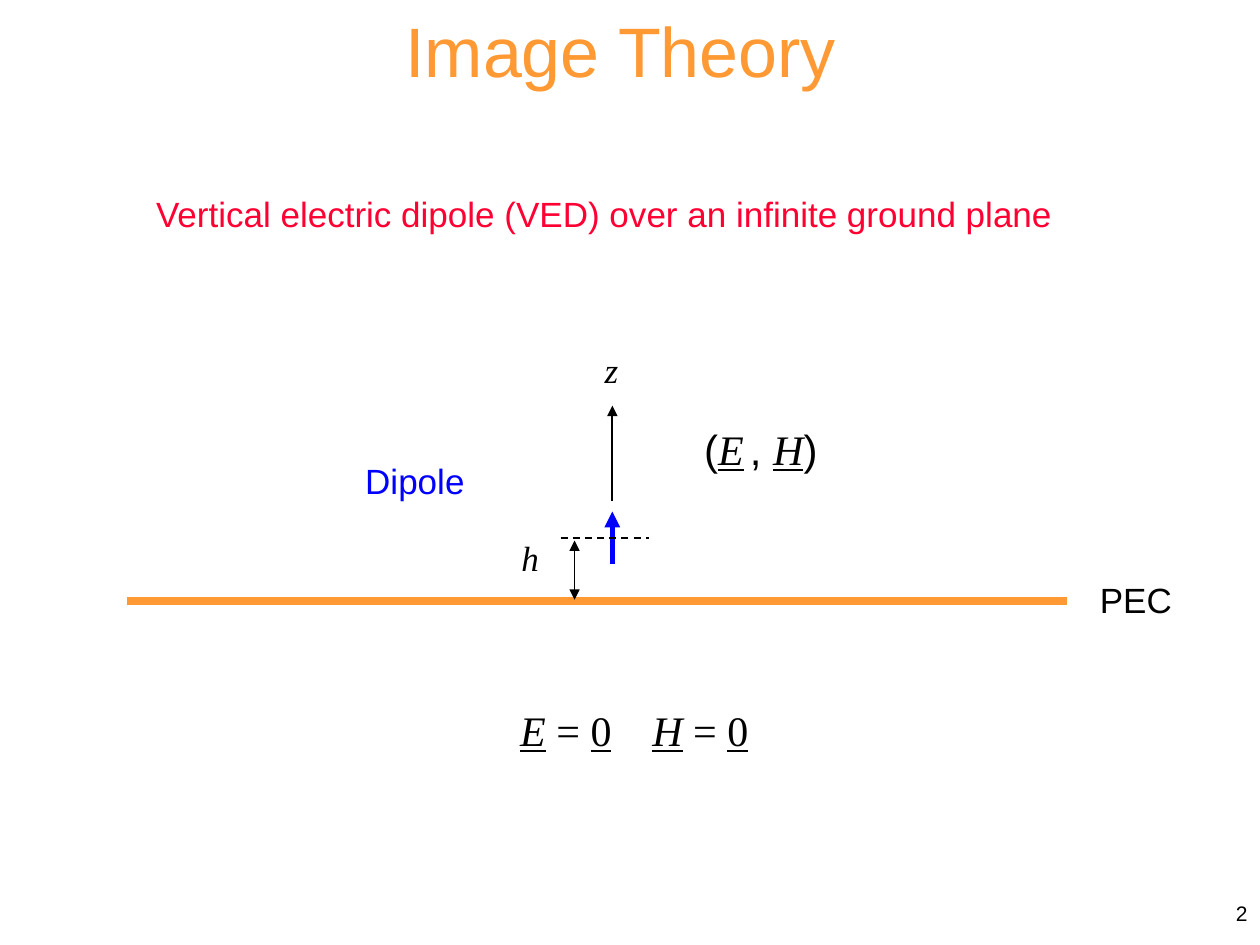
from pptx import Presentation
from pptx.dml.color import RGBColor
from pptx.enum.dml import MSO_LINE
from pptx.enum.shapes import MSO_CONNECTOR
from pptx.enum.text import MSO_ANCHOR, PP_ALIGN
from pptx.oxml.ns import qn
from pptx.util import Inches, Pt
from lxml import etree

LINE = MSO_CONNECTOR.STRAIGHT
DASH = MSO_LINE.DASH
TOP, MID = MSO_ANCHOR.TOP, MSO_ANCHOR.MIDDLE
LEFT, MIDDLE, RIGHT = PP_ALIGN.LEFT, PP_ALIGN.CENTER, PP_ALIGN.RIGHT
COLS, ROWS, CELL = 100, 75, 0.1

THEME = {
    "black": RGBColor.from_string("000000"),
    "orange": RGBColor.from_string("FF9933"),
    "red": RGBColor.from_string("FF0033"),
    "blue": RGBColor.from_string("0000FF"),
    "sans": "Arial",
    "serif": "Times New Roman",
    "title": Pt(40),
    "math": Pt(24),
    "label": Pt(20),
    "gap": Pt(14),
    "note": Pt(12),
}

SANS = {"name": THEME["sans"], "size": THEME["math"]}
SERIF = {"name": THEME["serif"], "size": THEME["math"]}
AXIS = {"name": THEME["serif"], "size": THEME["label"], "italic": True}
FIELD = {**SERIF, "italic": True, "underline": True}
ZERO = {**SERIF, "underline": True}
GAP = {**SERIF, "size": THEME["gap"]}


def label(size, ink):
    return {"name": THEME["sans"], "size": THEME[size], "color": THEME[ink]}


def grid(*cells):
    return [Inches(round(cell * CELL, 2)) for cell in cells]


def fill_text(frame, runs, align=LEFT, anchor=TOP):
    frame.word_wrap = True
    frame.vertical_anchor = anchor
    para = frame.paragraphs[0]
    para.alignment = align
    for text, style in runs:
        run = para.add_run()
        run.text = text
        run.font.color.rgb = style.get("color", THEME["black"])
        for key, value in style.items():
            if key != "color":
                setattr(run.font, key, value)


def add_text(slide, box, runs, **form):
    shape = slide.shapes.add_textbox(*grid(*box))
    fill_text(shape.text_frame, runs, **form)


def add_line(slide, ends, ink="black", width=1, dash=None, tips=()):
    shape = slide.shapes.add_connector(LINE, *grid(*ends))
    shape.line.color.rgb = THEME[ink]
    shape.line.width = Pt(width)
    if dash:
        shape.line.dash_style = dash
    stroke = shape.line._get_or_add_ln()
    for tip in tips:
        etree.SubElement(stroke, qn("a:" + tip), type="triangle")
    etree.SubElement(shape._element.spPr, qn("a:effectLst"))


def add_title(slide, box):
    title = slide.shapes.title
    for key, value in zip(("left", "top", "width", "height"), grid(*box)):
        setattr(title, key, value)
    fill_text(title.text_frame, [("Image Theory", label("title", "orange"))],
              align=MIDDLE)


def add_dipole(slide, box):
    left, top, width, ground = box
    axis, mark, mid = left + 38.5, left + 35.5, top + 16.7

    add_line(slide, (axis, top + 13.8, axis, top + 6.2), tips=["tailEnd"])
    add_line(slide, (axis, mid + 2.1, axis, mid - 2.1), "blue", 3,
             tips=["tailEnd"])
    add_line(slide, (left, top + ground, left + width, top + ground),
             "orange", 4.5)
    add_line(slide, (mark, mid + 0.2, mark, top + ground - 0.1),
             tips=["headEnd", "tailEnd"])
    add_line(slide, (mark - 1.1, mid, mark + 5.9, mid), dash=DASH)

    pair = [("(", SANS), ("E", FIELD), (" ", GAP), (", ", SANS),
            ("H", FIELD), (")", SANS)]
    parts = [
        (76.2, 19.4, 8.2, 4.3, [("PEC", label("label", "black"))]),
        (44.8, 7.1, 12, 5, pair),
        (17.9, 10, 10.5, 4.4, [("Dipole", label("label", "blue"))]),
        (36.9, 1.2, 3.9, 4.3, [("z", AXIS)]),
        (30.3, 16.1, 3.8, 4.3, [("h", AXIS)]),
    ]
    for col, row, wide, high, runs in parts:
        add_text(slide, (left + col, top + row, wide, high), runs)


def add_fields(slide, box):
    left, top, step, height = box
    for index, name in enumerate("EH"):
        runs = [(name, FIELD), (" = ", SERIF), ("0", ZERO)]
        add_text(slide, (left + index * step, top, step, height), runs)


def main():
    deck = Presentation()
    deck.slide_width, deck.slide_height = grid(COLS, ROWS)
    slide = deck.slides.add_slide(deck.slide_layouts[5])

    add_title(slide, (2, 0.1, 94.5, 7.7))
    head = "Vertical electric dipole (VED) over an infinite ground plane"
    add_text(slide, (11.4, 14.8, 74, 4.3), [(head, label("label", "red"))])
    add_dipole(slide, (10.1, 26, 74.6, 21.7))
    add_fields(slide, (40.3, 55.4, 10.5, 5))
    add_text(slide, (79.2, 70, 20.8, 5), [("2", label("note", "black"))],
             align=RIGHT, anchor=MID)
    deck.save("out.pptx")


if __name__ == "__main__":
    main()
